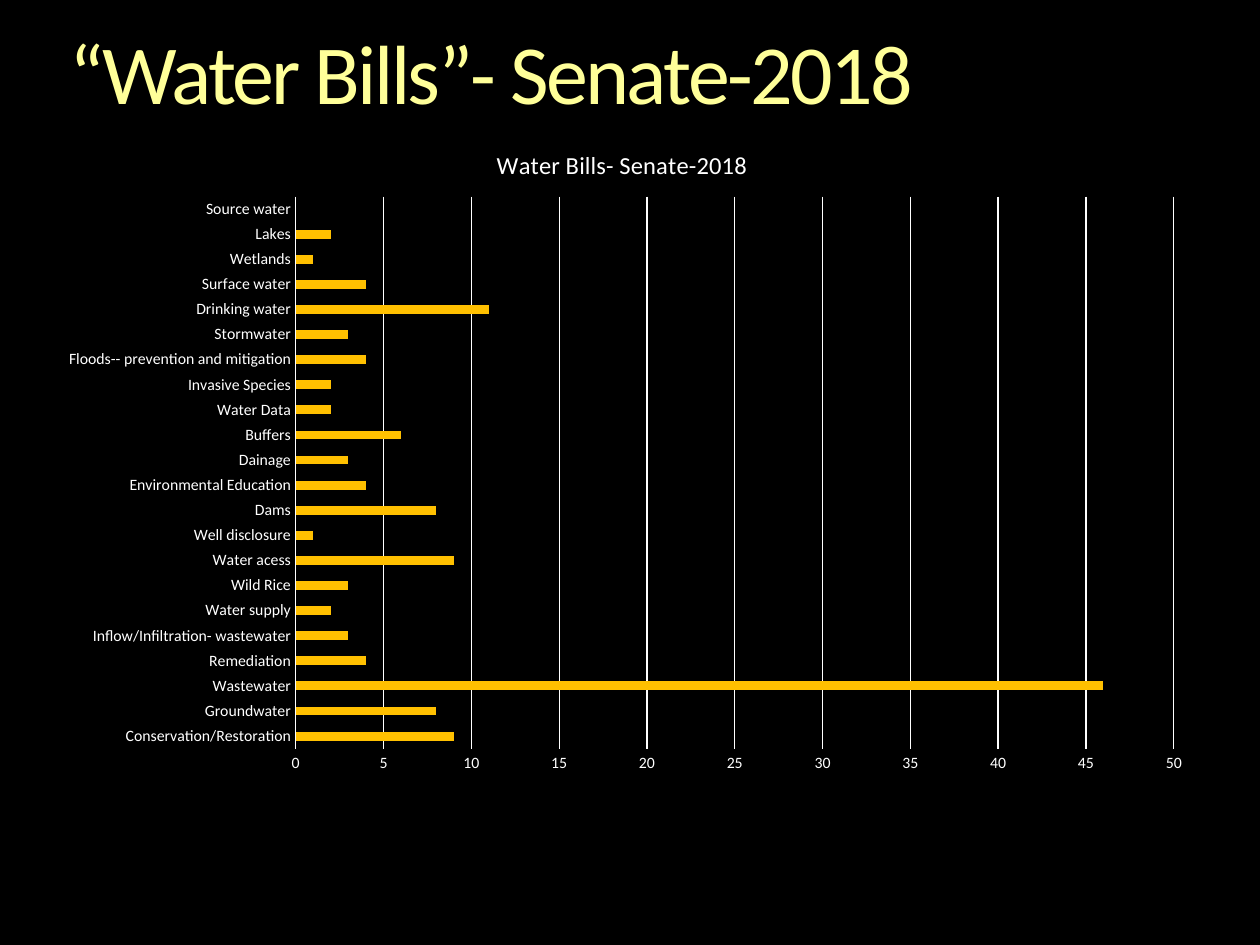
"""Build the slide of 2018 Senate water bills by topic."""
from lxml import etree
from pptx import Presentation
from pptx.chart import data
from pptx.dml import color
from pptx.enum import chart as kinds, text
from pptx.oxml import ns
from pptx.util import Inches, Pt

COLORS = {"background": "000000", "heading": "FFFF99", "text": "FFFFFF", "bar": "FFC000"}
FONT = "Calibri"
BILLS = {
    "Conservation/Restoration": 9,
    "Groundwater": 8,
    "Wastewater": 46,
    "Remediation": 4,
    "Inflow/Infiltration- wastewater": 3,
    "Water supply": 2,
    "Wild Rice": 3,
    "Water acess": 9,
    "Well disclosure": 1,
    "Dams": 8,
    "Environmental Education": 4,
    "Dainage": 3,
    "Buffers": 6,
    "Water Data": 2,
    "Invasive Species": 2,
    "Floods-- prevention and mitigation": 4,
    "Stormwater": 3,
    "Drinking water": 11,
    "Surface water": 4,
    "Wetlands": 1,
    "Lakes": 2,
    "Source water": None,
}
PLOT_LAYOUT = {"x": 0.22, "y": 0.11, "w": 0.76, "h": 0.83}


def rgb(name):
    return color.RGBColor.from_string(COLORS[name])


def write(paragraph, content, size, shade, spacing=0):
    run = paragraph.add_run()
    run.text = content
    run.font.name = FONT
    run.font.size = Pt(size)
    run.font.bold = False
    run.font.color.rgb = rgb(shade)
    if spacing:
        run.font._element.set("spc", str(int(spacing * 100)))


presentation = Presentation()
presentation.slide_width = Inches(10)
presentation.slide_height = Inches(7.5)
slide = presentation.slides.add_slide(presentation.slide_layouts[6])
slide.background.fill.solid()
slide.background.fill.fore_color.rgb = rgb("background")

heading = slide.shapes.add_textbox(Inches(0.42), Inches(0.25), Inches(9.17), Inches(0.73))
frame = heading.text_frame
frame.word_wrap = True
frame.auto_size = text.MSO_AUTO_SIZE.SHAPE_TO_FIT_TEXT
frame.margin_left = frame.margin_right = frame.margin_top = frame.margin_bottom = 0
frame.paragraphs[0].line_spacing = 0.9
write(frame.paragraphs[0], " “Water Bills”- Senate-2018", 48, "heading", spacing=-1.5)

chart_data = data.CategoryChartData()
chart_data.categories = list(BILLS)
chart_data.add_series("Series 1", list(BILLS.values()))
chart = slide.shapes.add_chart(
    kinds.XL_CHART_TYPE.BAR_CLUSTERED,
    Inches(0.33), Inches(0.98), Inches(9.17), Inches(5.28), chart_data,
).chart
chart.has_legend = False
chart.font.name = FONT
chart.font.size = Pt(10)
chart.font.color.rgb = rgb("text")
chart.has_title = True
write(chart.chart_title.text_frame.paragraphs[0], " Water Bills- Senate-2018", 14, "text")
chart.chart_title.include_in_layout = False

plot = chart.plots[0]
plot.gap_width = 182
plot.vary_by_categories = False
bars = plot.series[0].format.fill
bars.solid()
bars.fore_color.rgb = rgb("bar")

for axis in (chart.category_axis, chart.value_axis):
    axis.major_tick_mark = axis.minor_tick_mark = kinds.XL_TICK_MARK.NONE
    axis.tick_labels.font.name = FONT
    axis.tick_labels.font.size = Pt(9)
    axis.tick_labels.font.color.rgb = rgb("text")
chart.value_axis.minimum_scale = 0
chart.value_axis.maximum_scale = 50
chart.value_axis.major_unit = 5
chart.value_axis.has_major_gridlines = True
chart.value_axis.format.line.fill.background()
for line in (chart.category_axis.format.line, chart.value_axis.major_gridlines.format.line):
    line.color.rgb = rgb("text")
    line.width = Pt(0.75)

plot_area = chart._chartSpace.chart.plotArea
for old_layout in plot_area.findall(ns.qn("c:layout")):
    plot_area.remove(old_layout)
layout = etree.Element(ns.qn("c:layout"))
plot_area.insert(0, layout)
manual = etree.SubElement(layout, ns.qn("c:manualLayout"))
settings = {"layoutTarget": "inner", "xMode": "edge", "yMode": "edge", **PLOT_LAYOUT}
for tag, value in settings.items():
    etree.SubElement(manual, ns.qn("c:" + tag)).set("val", str(value))

presentation.save("out.pptx")
